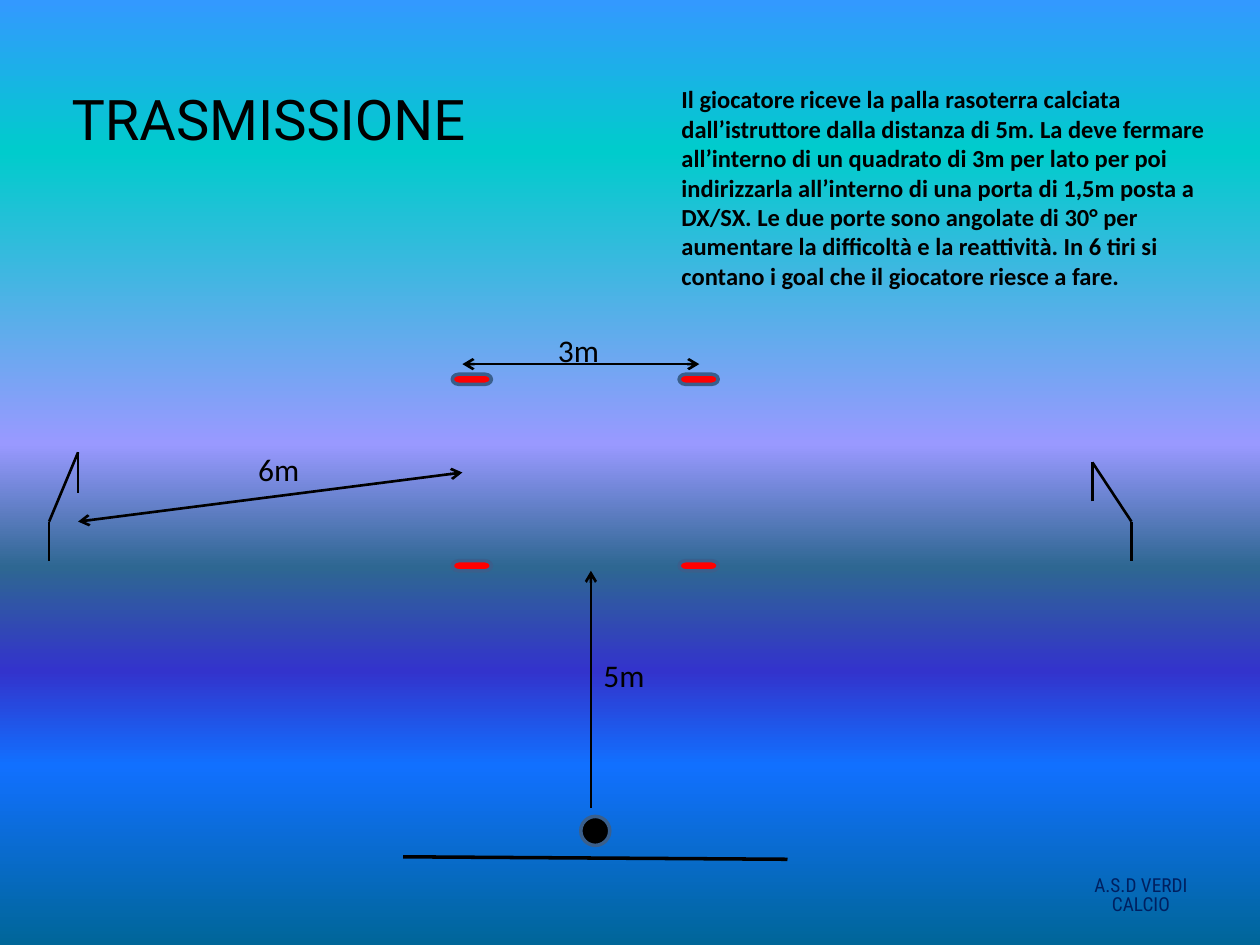
import dataclasses
import itertools

import lxml.etree
import pptx
import pptx.dml.color
import pptx.enum.shapes
import pptx.enum.text
import pptx.oxml.ns
import pptx.util

PX = 9144
BLACK, RED, EDGE, NAVY = "000000", "FF0000", "3A5F8C", "002060"
SHAPE = pptx.enum.shapes.MSO_SHAPE
ANCHOR = pptx.enum.text.MSO_ANCHOR
ALIGN = pptx.enum.text.PP_ALIGN
qn = pptx.oxml.ns.qn

BACKGROUND = [
    (0, "3399FF"), (16, "00CCCC"), (47, "9999FF"), (60, "2E6792"),
    (71, "3333CC"), (81, "1170FF"), (100, "006699"),
]


@dataclasses.dataclass
class Label:
    text: str
    x: int
    y: int
    w: int
    h: int
    font: dict
    color: str = BLACK
    frame: dict = dataclasses.field(default_factory=dict)
    para: dict = dataclasses.field(default_factory=dict)


@dataclasses.dataclass
class Line:
    x1: int
    y1: int
    x2: int
    y2: int
    width: float = 1.5
    ends: tuple = ()


def emu(*px: int) -> list:
    return [pptx.util.Emu(v * PX) for v in px]


def rgb(color: str) -> pptx.dml.color.RGBColor:
    return pptx.dml.color.RGBColor.from_string(color)


def apply(target, values: dict) -> None:
    for name, value in values.items():
        setattr(target, name, value)


def font(name: str, size: int, bold: bool = False) -> dict:
    return {"name": name, "size": pptx.util.Pt(size), "bold": bold}


def paint_background(s) -> None:
    fill = s.background.fill
    fill.gradient()
    fill.gradient_angle = 270
    stops = next(s.element.iter(qn("a:gsLst")))
    for stop in list(stops):
        stops.remove(stop)
    for percent, color in BACKGROUND:
        stop = lxml.etree.SubElement(stops, qn("a:gs"), pos=str(percent * 1000))
        lxml.etree.SubElement(stop, qn("a:srgbClr"), val=color)


def draw_label(s, label: Label) -> None:
    sp = s.shapes.add_textbox(*emu(label.x, label.y, label.w, label.h))
    tf = sp.text_frame
    apply(tf, {"word_wrap": True, **label.frame})
    p = tf.paragraphs[0]
    apply(p, label.para)
    r = p.add_run()
    r.text = label.text
    apply(r.font, label.font)
    r.font.color.rgb = rgb(label.color)


def draw_line(s, line: Line) -> None:
    sp = s.shapes.add_connector(
        pptx.enum.shapes.MSO_CONNECTOR.STRAIGHT,
        *emu(line.x1, line.y1, line.x2, line.y2),
    )
    sp.line.color.rgb = rgb(BLACK)
    sp.line.width = pptx.util.Pt(line.width)
    ln = sp.line._get_or_add_ln()
    for end in line.ends:
        lxml.etree.SubElement(ln, qn(f"a:{end}"), type="arrow")
    lxml.etree.SubElement(sp._element.spPr, qn("a:effectLst"))


def draw_shape(s, kind, x: int, y: int, w: int, h: int, color: str) -> None:
    sp = s.shapes.add_shape(kind, *emu(x, y, w, h))
    sp.shadow.inherit = False
    sp.fill.solid()
    sp.fill.fore_color.rgb = rgb(color)
    sp.line.color.rgb = rgb(EDGE)
    sp.line.width = pptx.util.Pt(2)


BOTH = ("headEnd", "tailEnd")
LINES = [
    Line(320, 680, 625, 682, 2),
    Line(469, 641, 469, 453, ends=("tailEnd",)),
    Line(555, 289, 367, 289, ends=BOTH),
    Line(367, 375, 62, 414, ends=BOTH),
]
GOALS = [
    [(62, 391), (62, 359), (39, 414), (39, 445)],
    [(867, 398), (867, 367), (898, 414), (898, 445)],
]
MEASURE = font("Calibri", 18)
LABELS = [
    Label("TRASMISSIONE", 47, 31, 900, 125, font("Roboto", 32),
          frame={"vertical_anchor": ANCHOR.MIDDLE}),
    Label("3m", 433, 258, 114, 40, MEASURE),
    Label("5m", 469, 516, 125, 40, MEASURE),
    Label("6m", 195, 352, 125, 40, MEASURE),
    Label("Il giocatore riceve la palla rasoterra calciata dall’istruttore dalla "
          "distanza di 5m. La deve fermare all’interno di un quadrato di 3m per "
          "lato per poi indirizzarla all’interno di una porta di 1,5m posta a "
          "DX/SX. Le due porte sono angolate di 30° per aumentare la difficoltà "
          "e la reattività. In 6 tiri si contano i goal che il giocatore riesce "
          "a fare.", 531, 62, 438, 175, font("Calibri", 14, True)),
    Label("A.S.D VERDI CALCIO", 836, 688, 139, 47, font("Roboto Condensed", 11),
          NAVY, {"vertical_anchor": ANCHOR.MIDDLE},
          {"alignment": ALIGN.CENTER, "line_spacing": 0.8}),
]


def main() -> None:
    prs = pptx.Presentation()
    prs.slide_width, prs.slide_height = emu(1000, 750)
    s = prs.slides.add_slide(prs.slide_layouts[6])
    paint_background(s)
    for y, x in itertools.product((297, 445), (359, 539)):
        draw_shape(s, SHAPE.FLOWCHART_TERMINATOR, x, y, 31, 8, RED)
    draw_shape(s, SHAPE.FLOWCHART_CONNECTOR, 461, 648, 23, 23, BLACK)
    posts = [Line(*a, *b) for goal in GOALS for a, b in zip(goal, goal[1:])]
    for line in LINES + posts:
        draw_line(s, line)
    for label in LABELS:
        draw_label(s, label)
    prs.save("out.pptx")


if __name__ == "__main__":
    main()
